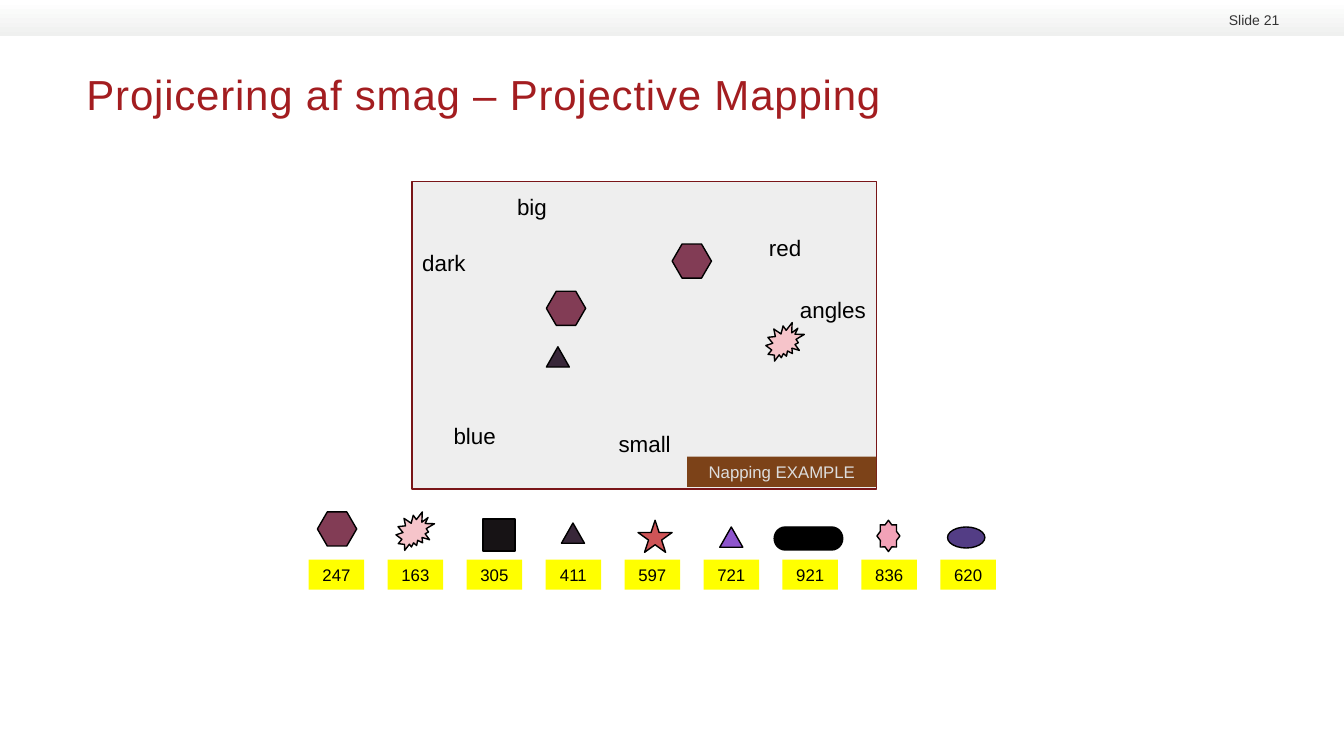
from dataclasses import dataclass

from pptx import Presentation
from pptx.dml.color import RGBColor
from pptx.enum.shapes import MSO_SHAPE
from pptx.enum.text import MSO_ANCHOR, PP_ALIGN
from pptx.util import Cm, Pt


@dataclass(frozen=True)
class Theme:
    face: str = "Arial"
    title: int = 30
    word: int = 16
    label: int = 12
    small: int = 10
    red: str = "A31D20"
    gray: str = "333333"
    black: str = "000000"
    white: str = "FFFFFF"
    band: str = "EFF0EF"
    map: str = "EEEEEE"
    frame: str = "791518"
    brown: str = "7C4218"
    pale: str = "DDDDDD"
    yellow: str = "FFFF00"


THEME = Theme()

# kind: preset, width, height, fill, first adjustment
ICONS = {
    "hexagon": (MSO_SHAPE.HEXAGON, 0.99, 0.86, "823C55", 0.29),
    "burst": (MSO_SHAPE.EXPLOSION2, 0.97, 0.97, "F6C4CA", None),
    "square": (MSO_SHAPE.RECTANGLE, 0.81, 0.81, "171315", None),
    "dark": (MSO_SHAPE.ISOSCELES_TRIANGLE, 0.58, 0.51, "382739", None),
    "star": (MSO_SHAPE.STAR_5_POINT, 0.86, 0.81, "CE5457", None),
    "violet": (MSO_SHAPE.ISOSCELES_TRIANGLE, 0.58, 0.51, "8E55CD", None),
    "pill": (MSO_SHAPE.FLOWCHART_TERMINATOR, 1.73, 0.58, "000000", None),
    "badge": (MSO_SHAPE.STAR_8_POINT, 0.58, 0.79, "F2A2B7", 0.38),
    "oval": (MSO_SHAPE.OVAL, 0.94, 0.53, "533D85", None),
}

# code, kind, left, top
SAMPLES = [
    ("247", "hexagon", 8.0, 12.9),
    ("163", "burst", 9.98, 12.9),
    ("305", "square", 12.17, 13.08),
    ("411", "dark", 14.15, 13.18),
    ("597", "star", 16.08, 13.11),
    ("721", "violet", 18.14, 13.28),
    ("921", "pill", 19.51, 13.28),
    ("836", "badge", 22.1, 13.11),
    ("620", "oval", 23.88, 13.28),
]
TAG_LEFT, TAG_TOP, TAG_STEP = 7.78, 14.1, 1.99

PLACED = [
    ("hexagon", 13.77, 7.34),
    ("hexagon", 16.94, 6.15),
    ("burst", 19.3, 8.13),
    ("dark", 13.77, 8.74),
]

WORDS = [
    ("big", 12.78, 4.75),
    ("small", 15.34, 10.72),
    ("dark", 10.39, 6.15),
    ("blue", 11.18, 10.52),
    ("red", 19.13, 5.77),
    ("angles", 19.91, 7.34),
]


def apply(target, values):
    for name, value in values.items():
        setattr(target, name, value)


def write(shape, text, size, color, align=PP_ALIGN.LEFT, **frame_values):
    """Put one styled line of text in a shape and return its run."""
    frame = shape.text_frame
    apply(frame, {"word_wrap": True, **frame_values})
    line = frame.paragraphs[0]
    line.alignment = align
    run = line.add_run()
    run.text = text
    apply(run.font, {"name": THEME.face, "size": Pt(size)})
    run.font.color.rgb = RGBColor.from_string(color)
    return run


def add_text(slide, box, text, size, color, **values):
    shape = slide.shapes.add_textbox(*map(Cm, box))
    return write(shape, text, size, color, **values)


def add_form(slide, preset, box, fill, line=None):
    """Add a flat shape; without a line colour it has no outline."""
    shape = slide.shapes.add_shape(preset, *map(Cm, box))
    shape.shadow.inherit = False
    shape.fill.solid()
    shape.fill.fore_color.rgb = RGBColor.from_string(fill)
    if line:
        shape.line.color.rgb = RGBColor.from_string(line)
        shape.line.width = Pt(1)
    else:
        shape.line.fill.background()
    return shape


def add_band(slide):
    band = add_form(slide, MSO_SHAPE.RECTANGLE, (0, 0, 33.87, 0.92), THEME.white)
    band.fill.gradient()
    band.fill.gradient_angle = 270
    for stop, color in zip(band.fill.gradient_stops, (THEME.white, THEME.band)):
        stop.color.rgb = RGBColor.from_string(color)


def add_label(slide, box, text, fill, color):
    shape = add_form(slide, MSO_SHAPE.RECTANGLE, box, fill)
    write(shape, text, THEME.label, color, PP_ALIGN.CENTER,
          vertical_anchor=MSO_ANCHOR.MIDDLE)


def add_icon(slide, kind, left, top):
    preset, width, height, fill, adjust = ICONS[kind]
    icon = add_form(slide, preset, (left, top, width, height), fill, THEME.black)
    if adjust is not None:
        icon.adjustments[0] = adjust


def main():
    deck = Presentation()
    apply(deck, {"slide_width": Cm(33.87), "slide_height": Cm(19.05)})
    slide = deck.slides.add_slide(deck.slide_layouts[6])
    flush = dict.fromkeys(
        ("margin_left", "margin_right", "margin_top", "margin_bottom"), 0)

    add_band(slide)
    title = add_text(slide, (2.18, 1.73, 29.51, 2.41),
                     "Projicering af smag – Projective Mapping",
                     THEME.title, THEME.red, **flush)
    title.font._element.set("spc", "60")
    add_text(slide, (29.74, 0.23, 2.5, 0.48), "Slide 21", THEME.small,
             THEME.gray, align=PP_ALIGN.RIGHT,
             vertical_anchor=MSO_ANCHOR.BOTTOM, **flush)

    add_form(slide, MSO_SHAPE.RECTANGLE, (10.38, 4.57, 11.71, 7.75),
             THEME.map, THEME.frame)
    add_label(slide, (17.32, 11.51, 4.77, 0.76), "Napping EXAMPLE",
              THEME.brown, THEME.pale)

    for index, (code, kind, left, top) in enumerate(SAMPLES):
        tag = (TAG_LEFT + index * TAG_STEP, TAG_TOP, 1.4, 0.76)
        add_label(slide, tag, code, THEME.yellow, THEME.black)
        add_icon(slide, kind, left, top)
    for kind, left, top in PLACED:
        add_icon(slide, kind, left, top)
    for word, left, top in WORDS:
        add_text(slide, (left, top, 3.76, 0.94), word, THEME.word, THEME.black)

    deck.save("out.pptx")


if __name__ == "__main__":
    main()
